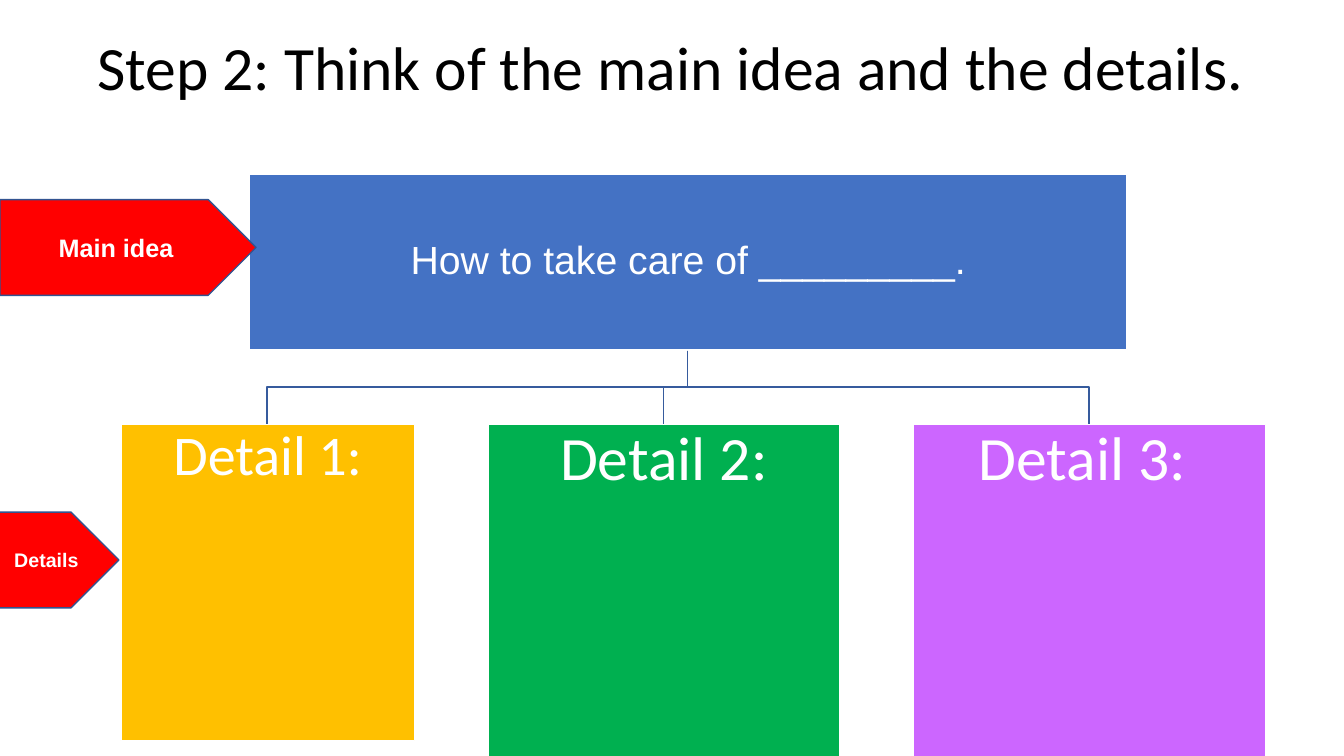
from pptx import Presentation
from pptx import util as u
from pptx.dml.color import RGBColor
from pptx.enum import shapes, text

PX = 9144  # EMU per px, 100 px to the inch

WHITE = RGBColor(0xFF, 0xFF, 0xFF)
BLACK = RGBColor(0, 0, 0)
BLUE = RGBColor(0x44, 0x72, 0xC4)
BRANCH_BLUE = RGBColor(0x36, 0x5B, 0x9D)
EDGE_BLUE = RGBColor(0x32, 0x54, 0x91)
GOLD = RGBColor(0xFF, 0xC0, 0x00)
GREEN = RGBColor(0x00, 0xB0, 0x50)
PURPLE = RGBColor(0xCC, 0x66, 0xFF)
RED = RGBColor(0xFF, 0, 0)

TOPIC = (247, 173, 871, 174)
DETAIL_TOP = 421
# wording, left, width, height, fill, text size
DETAILS = [
    ("Detail 1:", 120, 291, 314, GOLD, 40),
    ("Detail 2:", 484, 349, 365, GREEN, 44),
    ("Detail 3: ", 906, 349, 345, PURPLE, 44),
]


def px(*lengths):
    return [u.Emu(length * PX) for length in lengths]


def write(shape, wording, size, font, color, bold=False, anchor=text.MSO_ANCHOR.MIDDLE):
    frame = shape.text_frame
    frame.word_wrap = True
    frame.vertical_anchor = anchor
    para = frame.paragraphs[0]
    para.alignment = text.PP_ALIGN.CENTER
    span = para.add_run()
    span.text = wording
    span.font.size = u.Pt(size)
    span.font.name = font
    span.font.bold = bold
    span.font.color.rgb = color


def add_title(page, wording):
    title = page.shapes.title
    title.left, title.top, title.width, title.height = px(-2, 24, 1335, 84)
    write(title, wording, 44, "Calibri", BLACK, anchor=text.MSO_ANCHOR.TOP)
    title.text_frame.auto_size = text.MSO_AUTO_SIZE.SHAPE_TO_FIT_TEXT


def add_filled(page, kind, place, fill, edge):
    shape = page.shapes.add_shape(kind, *px(*place))
    shape.shadow.inherit = False
    shape.fill.solid()
    shape.fill.fore_color.rgb = fill
    shape.line.color.rgb = edge
    shape.line.width = u.Pt(1)
    return shape


def add_box(page, place, fill, inset, wording, size, font, anchor):
    box = add_filled(page, shapes.MSO_SHAPE.RECTANGLE, place, fill, WHITE)
    write(box, wording, size, font, WHITE, anchor=anchor)
    frame = box.text_frame
    frame.margin_left = frame.margin_right = u.Emu(inset * PX)
    frame.margin_top = frame.margin_bottom = u.Emu(inset * PX)
    frame.paragraphs[0].line_spacing = 0.9


def add_label(page, place, wording, size):
    label = add_filled(page, shapes.MSO_SHAPE.PENTAGON, place, RED, EDGE_BLUE)
    write(label, wording, size, "Arial", WHITE, bold=True)


def add_branch(page, end_x):
    """Draw the stepped line from the topic box down to a detail box."""
    left, top, width, height = TOPIC
    start_x, start_y = left + width // 2, top + height + 1
    middle_y = (start_y + DETAIL_TOP) // 2
    builder = page.shapes.build_freeform(start_x, start_y, scale=PX)
    builder.add_line_segments(
        [(start_x, middle_y), (end_x, middle_y), (end_x, DETAIL_TOP)], close=False)
    branch = builder.convert_to_shape()
    branch.shadow.inherit = False
    branch.fill.background()
    branch.line.color.rgb = BRANCH_BLUE
    branch.line.width = u.Pt(1)


def main():
    deck = Presentation()
    deck.slide_width, deck.slide_height = px(1333, 750)
    page = deck.slides.add_slide(deck.slide_layouts[5])
    add_title(page, "Step 2: Think of the main idea and the details.")

    for _, left, width, *_ in DETAILS:
        add_branch(page, left + width // 2)
    add_box(page, TOPIC, BLUE, 2, "How to take care of _________.", 28, "Arial",
            text.MSO_ANCHOR.MIDDLE)
    for wording, left, width, height, fill, size in DETAILS:
        add_box(page, (left, DETAIL_TOP, width, height), fill, 3, wording, size,
                "Calibri", text.MSO_ANCHOR.TOP)

    add_label(page, (0, 198, 254, 95), "Main idea", 18)
    add_label(page, (-2, 508, 120, 95), "Details", 14)
    deck.save("out.pptx")


if __name__ == "__main__":
    main()
